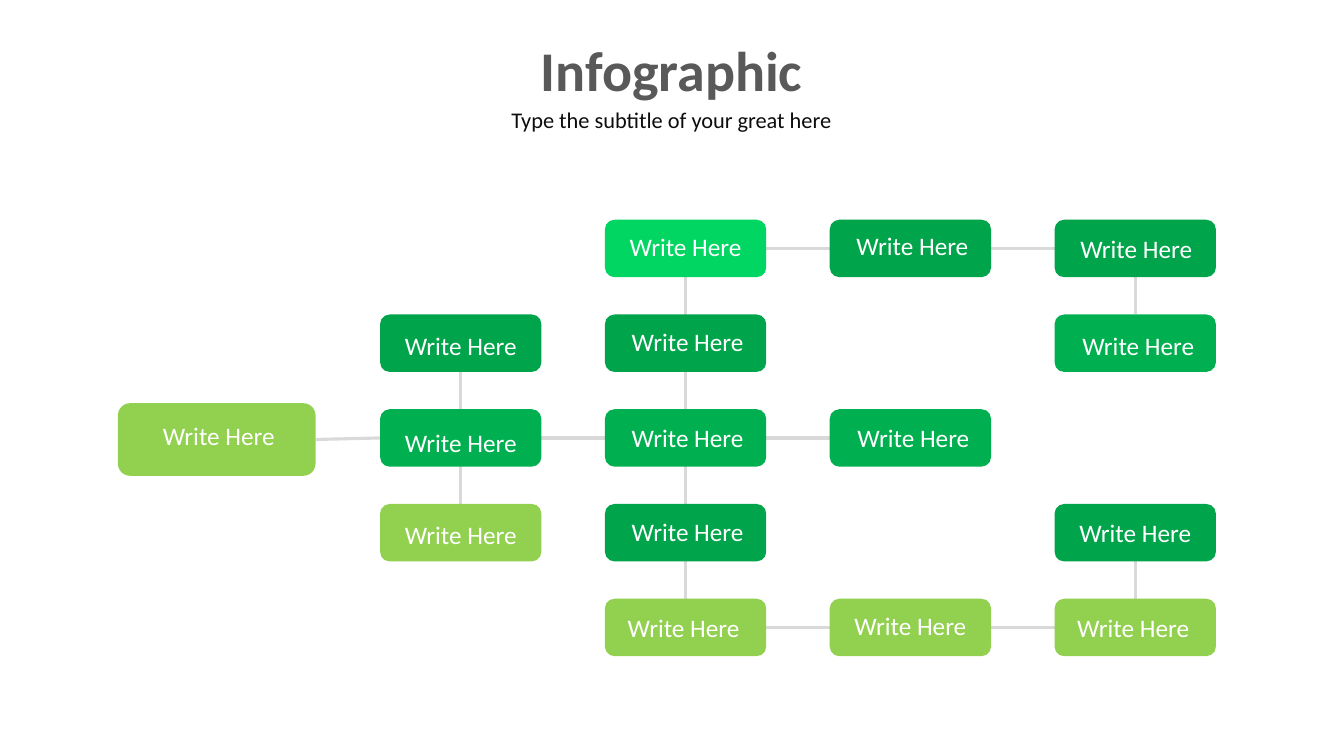
from pptx import Presentation
from pptx.dml.color import RGBColor
from pptx.enum.shapes import MSO_CONNECTOR, MSO_SHAPE
from pptx.enum.text import MSO_ANCHOR, MSO_AUTO_SIZE, PP_ALIGN
from pptx.oxml.ns import qn
from pptx.util import Inches, Pt
from lxml import etree

ROUND = MSO_SHAPE.ROUNDED_RECTANGLE
LINE = MSO_CONNECTOR.STRAIGHT
MID, HIGH = MSO_ANCHOR.MIDDLE, MSO_ANCHOR.TOP
FIXED = MSO_AUTO_SIZE.NONE
CENTER = PP_ALIGN.CENTER

HUES = {
    "lime": "92D050", "dark": "00A44A", "green": "00B050", "mint": "00D661",
    "rule": "D9D9D9", "title": "595959", "sub": "0D0D0D", "white": "FFFFFF",
}
TITLE = "Infographic"
SUB = "Type the subtitle of your great here"
LABEL = "Write Here"

# key: (column, row), value: (colour, label shift right, label shift down)
NODES = {
    (0, 1): ("dark", 0, 0.02),
    (0, 2): ("green", 0, 0.04),
    (0, 3): ("lime", 0, 0.02),
    (1, 0): ("mint", 0, -0.02),
    (1, 1): ("dark", 0.02, -0.02),
    (1, 2): ("green", 0.02, -0.01),
    (1, 3): ("dark", 0.02, -0.01),
    (1, 4): ("lime", -0.02, 0),
    (2, 0): ("dark", 0.02, -0.03),
    (2, 2): ("green", 0.03, -0.01),
    (2, 4): ("lime", 0, -0.02),
    (3, 0): ("dark", 0.01, 0),
    (3, 1): ("green", 0.03, 0.02),
    (3, 3): ("dark", 0, 0),
    (3, 4): ("lime", -0.02, 0),
}
ROOT = ("lime", 0.02, -0.04)
DOWN = [((3, 3), (3, 4)), ((3, 0), (3, 1)), ((0, 1), (0, 3)), ((1, 0), (1, 4))]
ACROSS = [((1, 0), (2, 0)), ((1, 4), (2, 4)), ((2, 4), (3, 4)),
          ((2, 0), (3, 0)), ((0, 2), (2, 2)), ("root", (0, 2))]
LEFT, TOP, STEP, DROP = 3.77, 2.18, 2.23, 0.94
WIDE, TALL = 1.6, 0.57


def hue(name):
    return RGBColor.from_string(HUES[name])


def write(shape, text, size, color, bold=False, anchor=MID, space=None,
          pad=(0.1, 0.05), shift=(0, 0)):
    frame = shape.text_frame
    frame.word_wrap = True
    frame.auto_size = FIXED
    frame.vertical_anchor = anchor
    frame.margin_left = Inches(pad[0] + shift[0])
    frame.margin_right = Inches(pad[0] - shift[0])
    frame.margin_top = Inches(pad[1] + shift[1])
    frame.margin_bottom = Inches(pad[1] - shift[1])
    para = frame.paragraphs[0]
    para.alignment = CENTER
    para.line_spacing = space
    run = para.add_run()
    run.text = text
    run.font.name = "Calibri"
    run.font.size = Pt(size)
    run.font.bold = bold
    run.font.color.rgb = hue(color)


def draw_box(slide, place, node):
    color, right, down = node
    box = slide.shapes.add_shape(ROUND, *map(Inches, place))
    box.shadow.inherit = False
    box.fill.solid()
    box.fill.fore_color.rgb = hue(color)
    box.line.fill.background()
    write(box, LABEL, 18, "white", shift=(right, down))
    return box


def draw_link(slide):
    link = slide.shapes.add_connector(LINE, 0, 0, 0, 0)
    link.line.color.rgb = hue("rule")
    link.line.width = Pt(2.25)
    etree.SubElement(link.element.spPr, qn("a:effectLst"))
    return link


def main():
    deck = Presentation()
    deck.slide_width, deck.slide_height = Inches(13.33), Inches(7.5)
    slide = deck.slides.add_slide(deck.slide_layouts[5])

    title = slide.shapes.title
    title.left, title.top = Inches(0.57), Inches(0.37)
    title.width, title.height = Inches(12.18), Inches(0.72)
    write(title, TITLE, 40, "title", bold=True, space=0.9)
    sub = slide.shapes.add_textbox(*map(Inches, (0.57, 1.03, 12.18, 0.53)))
    write(sub, SUB, 16, "sub", anchor=HIGH, space=0.9)

    ends = [(a, 2, b, 0) for a, b in DOWN] + [(a, 3, b, 1) for a, b in ACROSS]
    links = [draw_link(slide) for _ in ends]

    boxes = {"root": draw_box(slide, (1.17, 4, 1.96, 0.72), ROOT)}
    for (col, row), node in NODES.items():
        place = (LEFT + col * STEP, TOP + row * DROP, WIDE, TALL)
        boxes[col, row] = draw_box(slide, place, node)

    for link, (first, out, last, into) in zip(links, ends):
        link.begin_connect(boxes[first], out)
        link.end_connect(boxes[last], into)

    deck.save("out.pptx")


if __name__ == "__main__":
    main()
